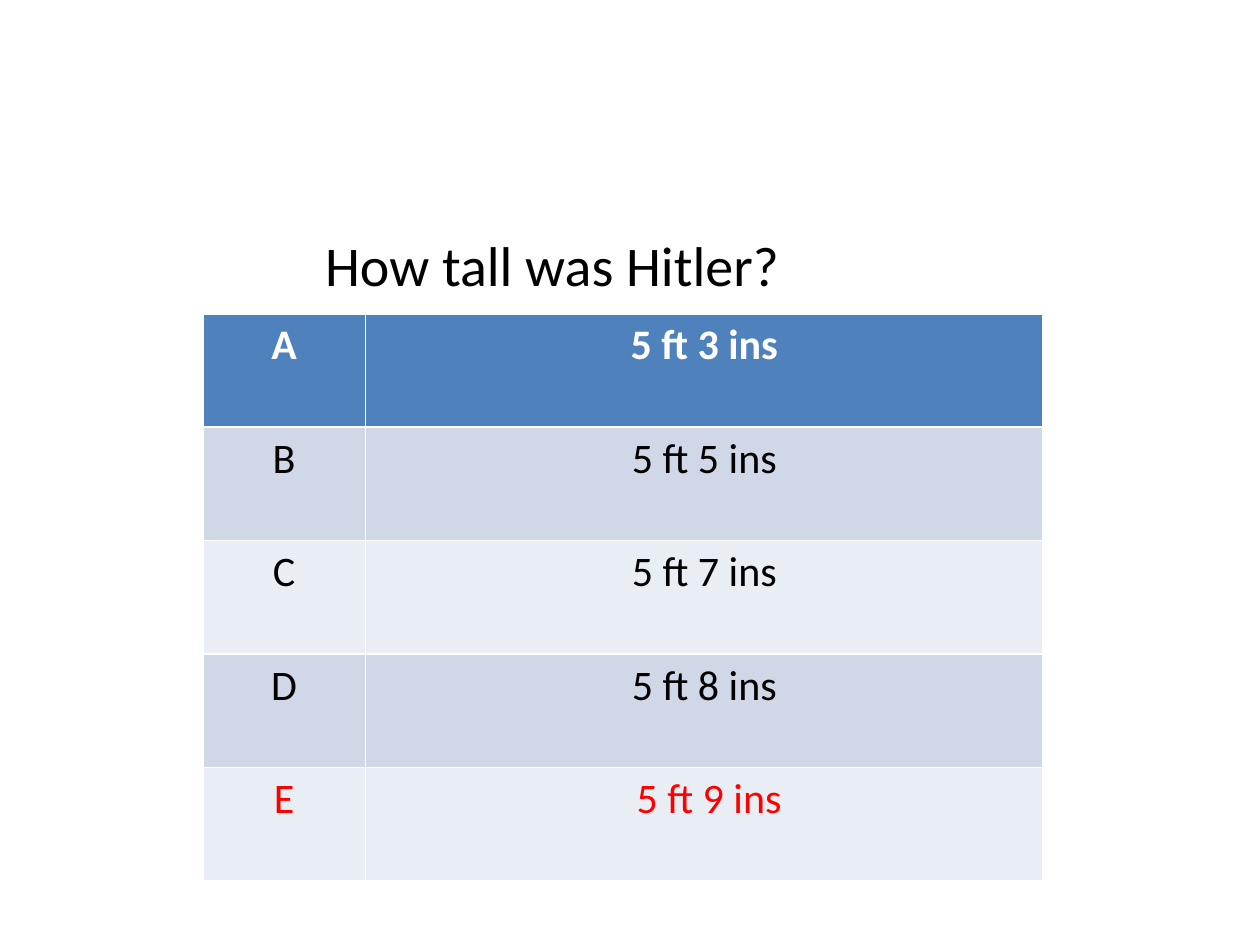
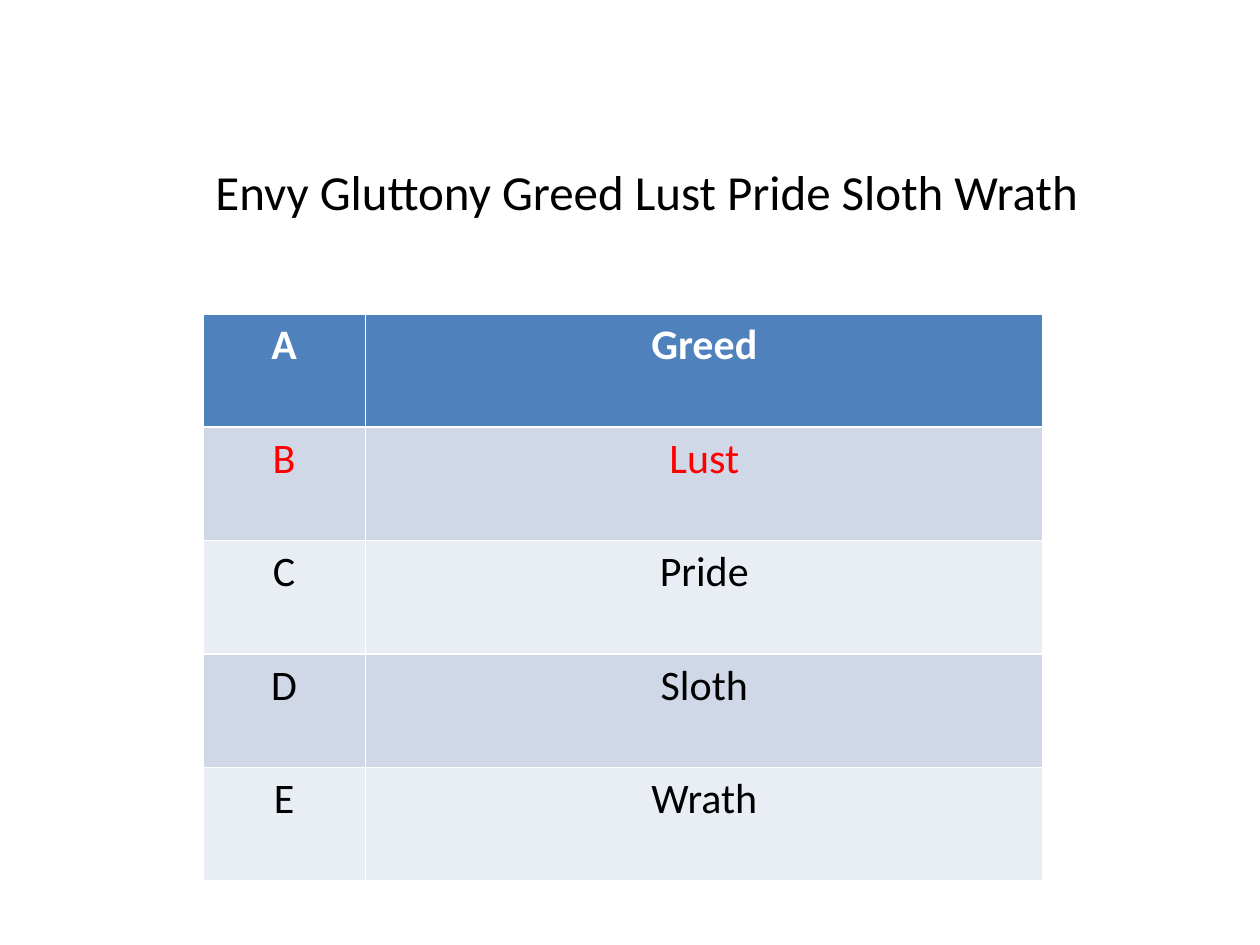
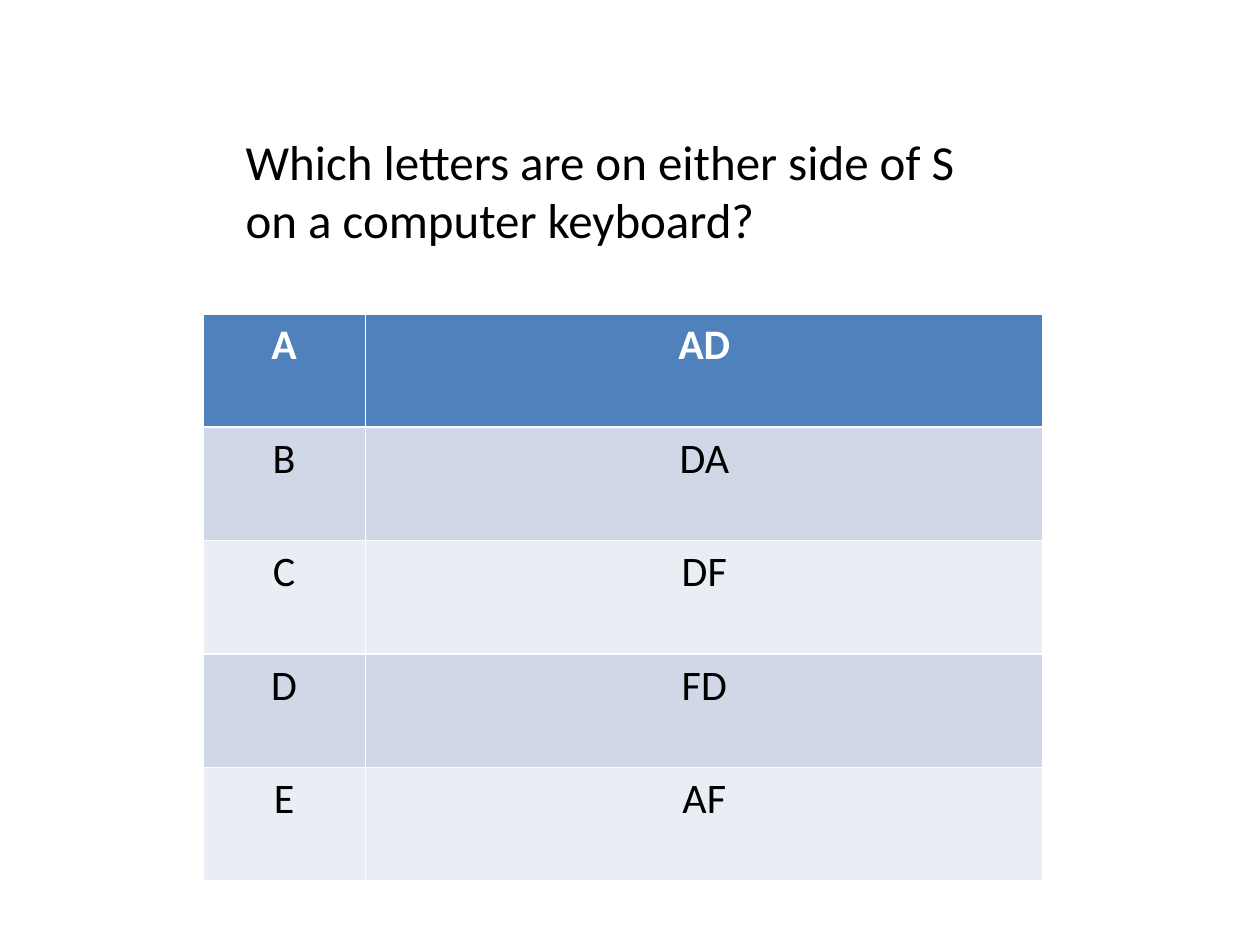
import pptx
import pptx.dml.color
import pptx.enum.text
import pptx.util

Inches = pptx.util.Inches
Pt = pptx.util.Pt
RGBColor = pptx.dml.color.RGBColor

HEADER_BLUE = RGBColor(0x4F, 0x81, 0xBD)
BAND_DARK = RGBColor(0xD0, 0xD8, 0xE8)
BAND_LIGHT = RGBColor(0xE9, 0xED, 0xF4)
WHITE = RGBColor(0xFF, 0xFF, 0xFF)
BLACK = RGBColor(0x00, 0x00, 0x00)
ANSWER_RED = RGBColor(0xFF, 0x00, 0x00)
FONT = "Calibri"
LETTERS = "ABCDE"
ROW_HEIGHT = 0.9
ROW_FILLS = [HEADER_BLUE, BAND_DARK, BAND_LIGHT, BAND_DARK, BAND_LIGHT]

quiz = [
    ("How tall was Hitler?", 32, (2.48, 1.78, 4.88, 0.64),
     ["5 ft 3 ins", "5 ft 5 ins", "5 ft 7 ins", "5 ft 8 ins", " 5 ft 9 ins"], "E"),
    ("Envy Gluttony Greed Lust Pride Sloth Wrath", 28, (1.61, 1.23, 7.24, 0.57),
     ["Greed", "Lust", "Pride", "Sloth", "Wrath"], "B"),
    ("Which letters are on either side of S on a computer keyboard?", 28,
     (1.85, 0.99, 5.83, 1.04), ["AD", "DA", "DF", "FD", "AF"], None),
]


def style_text(paragraph, size, color, alignment, bold=False):
    paragraph.alignment = alignment
    paragraph.font.name = FONT
    paragraph.font.size = Pt(size)
    paragraph.font.bold = bold
    paragraph.font.color.rgb = color


presentation = pptx.Presentation()
presentation.slide_width = Inches(10)
presentation.slide_height = Inches(7.5)
title_only = presentation.slide_layouts[5]

for question_text, question_size, place, choices, revealed in quiz:
    slide = presentation.slides.add_slide(title_only)

    question = slide.shapes.title
    question.left, question.top, question.width, question.height = map(Inches, place)
    question.text_frame.text = question_text
    question.text_frame.word_wrap = True
    question.text_frame.auto_size = pptx.enum.text.MSO_AUTO_SIZE.SHAPE_TO_FIT_TEXT
    question.text_frame.vertical_anchor = pptx.enum.text.MSO_ANCHOR.TOP
    style_text(question.text_frame.paragraphs[0], question_size, BLACK,
               pptx.enum.text.PP_ALIGN.LEFT)

    answers = slide.shapes.add_table(
        len(choices), 2, Inches(1.61), Inches(2.49),
        Inches(6.67), Inches(ROW_HEIGHT * len(choices))).table
    answers.columns[0].width = Inches(1.29)
    answers.columns[1].width = Inches(5.38)

    for row, (letter, choice) in enumerate(zip(LETTERS, choices)):
        is_header = row == 0
        if letter == revealed:
            color = ANSWER_RED
        else:
            color = WHITE if is_header else BLACK
        for column, content in enumerate((letter, choice)):
            cell = answers.cell(row, column)
            cell.text = content
            cell.fill.solid()
            cell.fill.fore_color.rgb = ROW_FILLS[row]
            style_text(cell.text_frame.paragraphs[0], 24, color,
                       pptx.enum.text.PP_ALIGN.CENTER, is_header)

presentation.save("out.pptx")
